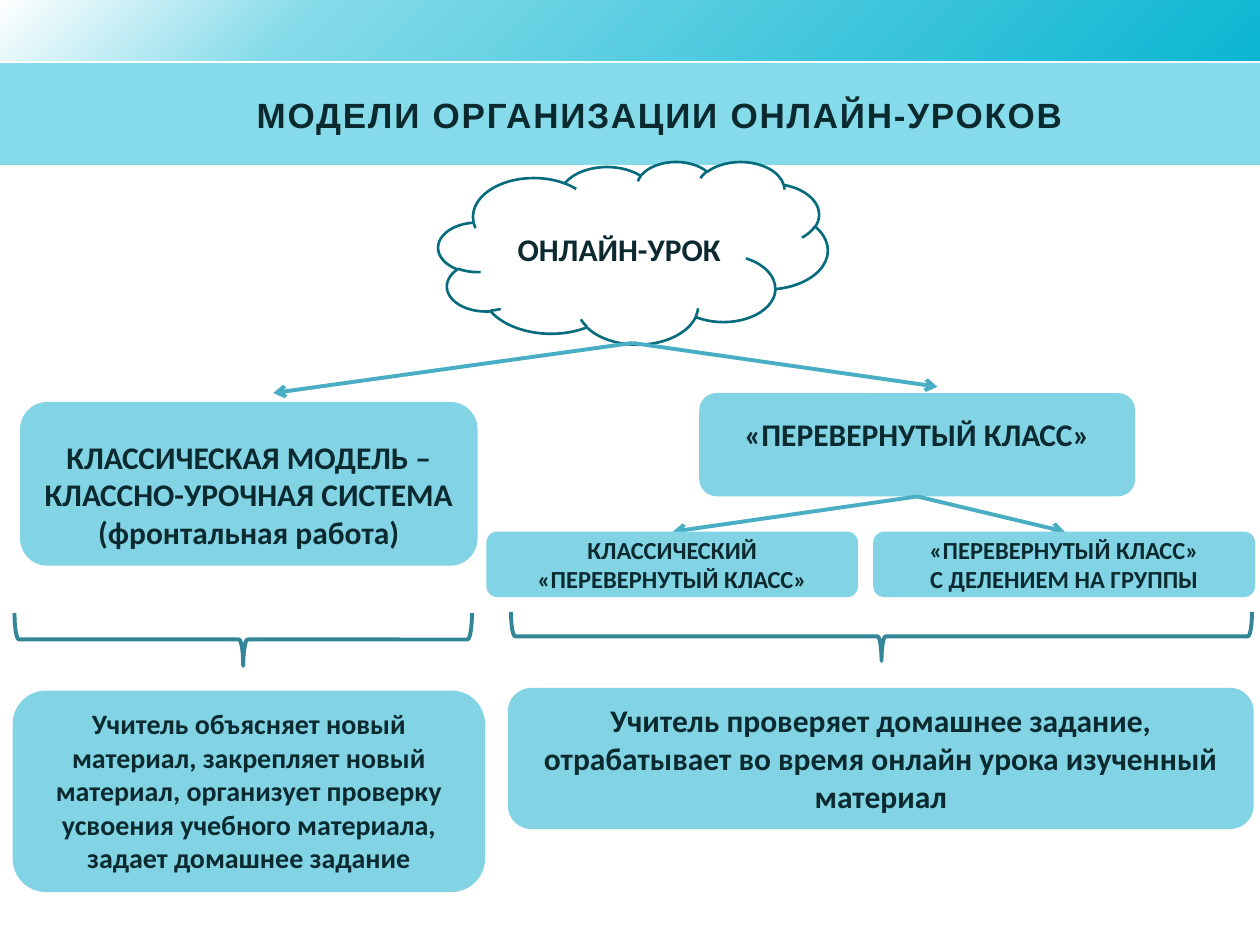
from lxml import etree
from pptx import Presentation
from pptx import util as u
from pptx.dml.color import RGBColor
from pptx.enum import shapes, text
from pptx.oxml import parse_xml
from pptx.oxml.ns import nsdecls, qn

COLORS = {
    "ink": "0A2A30", "white": "FFFFFF", "band": "85DBE9", "box": "82D4E5",
    "cloud": "066B7C", "arrow": "49AEC3", "brace": "328697",
    "deep": "0BB6D2", "mid": "83DAE8",
}
G = shapes.MSO_SHAPE


class Deck:
    """Slide style and drawing methods; all lengths are in points."""

    def __init__(self, width, height):
        self.prs = Presentation()
        self.prs.slide_width, self.prs.slide_height = u.Pt(width), u.Pt(height)
        self.s = self.prs.slides.add_slide(self.prs.slide_layouts[6])

    def color(self, name):
        return RGBColor.from_string(COLORS[name])

    def shape(self, kind, box, fill=None, line=None, weight=1.5):
        sp = self.s.shapes.add_shape(kind, *map(u.Pt, box))
        sp.shadow.inherit = False
        if fill:
            sp.fill.solid()
            sp.fill.fore_color.rgb = self.color(fill)
        else:
            sp.fill.background()
        if line:
            sp.line.color.rgb = self.color(line)
            sp.line.width = u.Pt(weight)
        else:
            sp.line.fill.background()
        return sp

    def label(self, sp, words, size, font="Calibri", anchor=text.MSO_ANCHOR.TOP,
              margins=(7.2, 3.6, 7.2, 3.6), spacing=None):
        tf = sp.text_frame
        tf.word_wrap = True
        tf.vertical_anchor = anchor
        tf.margin_left, tf.margin_top, tf.margin_right, tf.margin_bottom = map(u.Pt, margins)
        tf.text = words
        for p in tf.paragraphs:
            p.alignment = text.PP_ALIGN.CENTER
            for r in p.runs:
                r.font.name, r.font.size, r.font.bold = font, u.Pt(size), True
                r.font.color.rgb = self.color("ink")
                if spacing:
                    r._r.get_or_add_rPr().set("spc", str(spacing * 100))

    def title(self, box, words):
        sp = self.s.shapes.add_textbox(*map(u.Pt, box))
        self.label(sp, words, 20, "Arial", text.MSO_ANCHOR.MIDDLE,
                   (41, 3.6, 7.2, 3.6), spacing=1)

    def card(self, box, words, size, **style):
        self.label(self.shape(G.ROUNDED_RECTANGLE, box, "box"), words, size, **style)

    def brace(self, left, top, width, height):
        # Drawn upright around the same centre, then turned to point down
        shift = (width - height) / 2
        sp = self.shape(G.RIGHT_BRACE, (left + shift, top - shift, height, width),
                        line="brace", weight=2.25)
        sp.rotation = 90

    def arrow(self, start, end):
        c = self.s.shapes.add_connector(
            shapes.MSO_CONNECTOR.STRAIGHT, *map(u.Pt, (*start, *end)))
        c.line.color.rgb = self.color("arrow")
        c.line.width = u.Pt(2.25)
        spPr = c._element.spPr
        etree.SubElement(spPr.find(qn("a:ln")), qn("a:tailEnd"), type="arrow")
        etree.SubElement(spPr, qn("a:effectLst"))

    def radial(self, sp, stops):
        gs = "".join(f'<a:gs pos="{pos * 1000}"><a:srgbClr val="{COLORS[name]}"/></a:gs>'
                     for pos, name in stops)
        grad = parse_xml(
            f'<a:gradFill {nsdecls("a")} rotWithShape="1"><a:gsLst>{gs}</a:gsLst>'
            '<a:path path="circle"><a:fillToRect l="100000" t="100000"/></a:path>'
            '</a:gradFill>')
        spPr = sp._element.spPr
        spPr.replace(spPr.find(qn("a:noFill")), grad)


def main():
    d = Deck(720, 540)

    # Header bands and title
    strip = d.shape(G.RECTANGLE, (0, -1.4, 720, 36))
    d.radial(strip, [(0, "deep"), (75, "mid"), (100, "white")])
    d.shape(G.RECTANGLE, (0, 36, 720, 58.3), "band")

    # Root of the tree
    cloud = d.shape(G.CLOUD, (250.5, 92.2, 222.5, 104.4), "white", "cloud")
    d.label(cloud, "ОНЛАЙН-УРОК", 18, anchor=text.MSO_ANCHOR.MIDDLE)
    d.title((0, 36.7, 720, 57), "МОДЕЛИ ОРГАНИЗАЦИИ ОНЛАЙН-УРОКОВ")

    # Two models
    d.card((11.5, 229.7, 261.4, 93.6),
           "КЛАССИЧЕСКАЯ МОДЕЛЬ –\nКЛАССНО-УРОЧНАЯ СИСТЕМА\n(фронтальная работа)",
           18, margins=(7.2, 15.8, 7.2, 3.6))
    d.card((399.6, 224.6, 249.1, 59), "«ПЕРЕВЕРНУТЫЙ КЛАСС»", 18,
           margins=(0, 9.8, 0, 0))

    # Branches
    root, flipped = (361.4, 196), (524.2, 283.7)
    for start, end in [(root, (156.2, 224.6)), (root, (535.7, 221)),
                       (flipped, (384.5, 303.8)), (flipped, (608.4, 303.8))]:
        d.arrow(start, end)

    # Two kinds of flipped class
    for left, width, words in [
            (277.9, 212.4, "КЛАССИЧЕСКИЙ\n«ПЕРЕВЕРНУТЫЙ КЛАСС»"),
            (499, 218.2, "«ПЕРЕВЕРНУТЫЙ КЛАСС»\nС ДЕЛЕНИЕМ НА ГРУППЫ")]:
        d.card((left, 303.8, width, 37.4), words, 14, margins=(0, 0, 0, 0))

    # Braces and what the teacher does
    d.brace(8.3, 350.3, 261.4, 30.2)
    d.brace(292, 349.6, 423.4, 28.1)
    d.card((7.2, 394.6, 270, 115.2),
           "Учитель объясняет новый материал, закрепляет новый материал, "
           "организует проверку усвоения учебного материала, задает домашнее задание", 16)
    d.card((290.2, 393.1, 426.2, 80.6),
           "Учитель проверяет домашнее задание, отрабатывает во время "
           "онлайн урока изученный материал", 18)

    d.prs.save("out.pptx")


if __name__ == "__main__":
    main()
